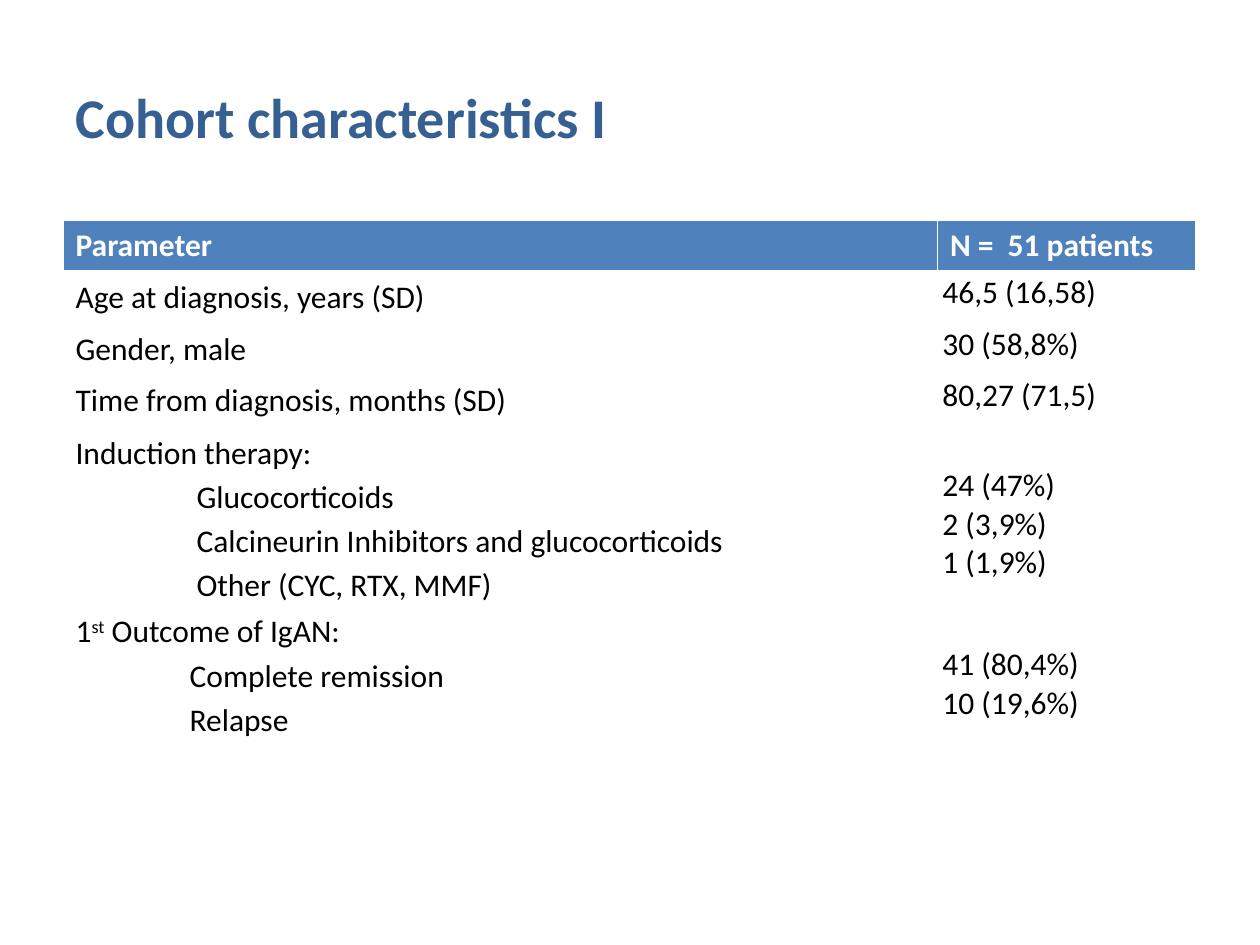
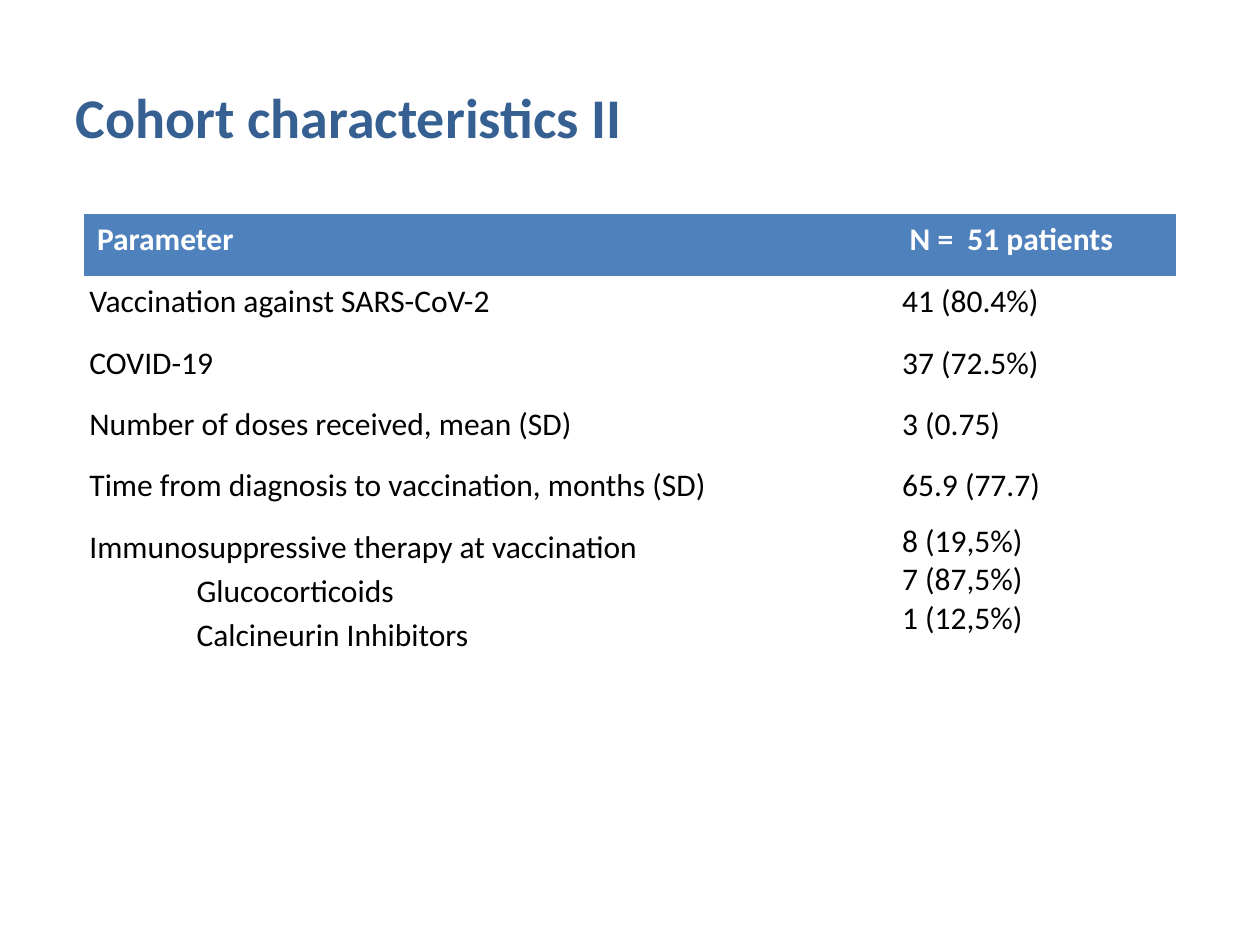
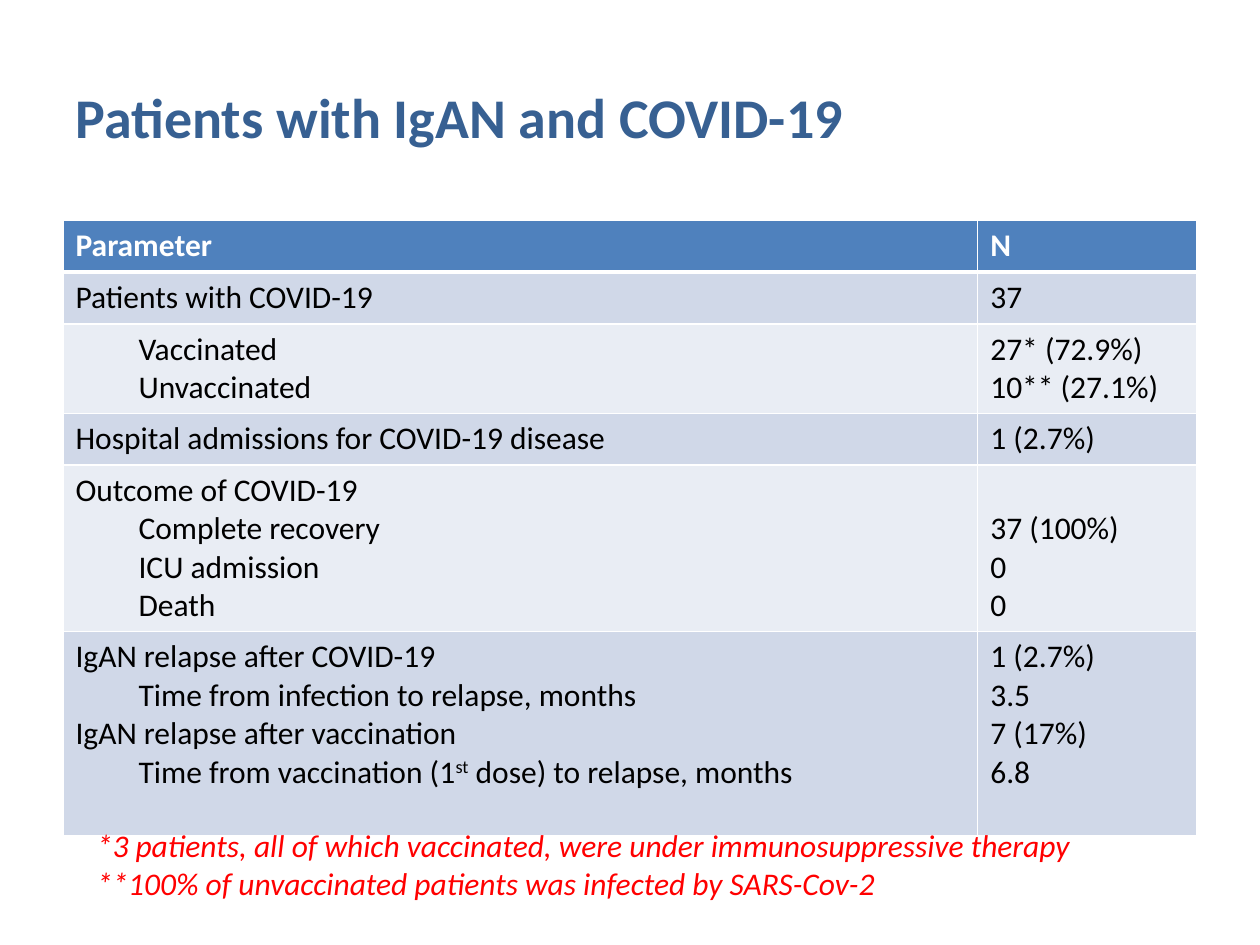
from lxml.etree import SubElement
from pptx import Presentation
from pptx.dml.color import RGBColor
from pptx.enum.text import MSO_ANCHOR, MSO_AUTO_SIZE, PP_ALIGN
from pptx.oxml.ns import qn
from pptx.util import Inches, Pt

COLORS = {
    "title": "376092",
    "header": "4F81BD",
    "white": "FFFFFF",
    "text": "000000",
    "band_dark": "D0D8E8",
    "band_light": "E9EDF4",
    "footnote": "FF0000",
}
FONT = "Calibri"
WIDTH, HEIGHT = Inches(10), Inches(7.5)
COLUMNS, ROWS = 20, 30
ONE_LINE = 1.64
TEXT_LINE = 1.22


def across(columns):
    return round(WIDTH * columns / COLUMNS)


def down(rows):
    return round(HEIGHT * rows / ROWS)


def cell_format(left, top, bottom, spacing=1.0):
    """Cell margins in grid units, with the line spacing of the text."""
    margins = {"margin_left": across(left), "margin_right": across(left),
               "margin_top": down(top), "margin_bottom": down(bottom)}
    return margins, spacing


ROOMY = cell_format(0.2, 0.2, 0.2)
TIGHT = cell_format(0.08, 0.04, 0)
TIGHT_SPACED = cell_format(0.08, 0.04, 0, 1.15)
GROUP = cell_format(0.2, 0.04, 0, 1.15)
TIGHT_BELOW_HEADING = cell_format(0.08, 0.04 + TEXT_LINE, 0)
ROOMY_BELOW_HEADING = cell_format(0.2, 0.2 + TEXT_LINE, 0.2)


def indented(depth, *lines):
    return [(depth, line) for line in lines]


class Deck:
    def __init__(self):
        self.presentation = Presentation()
        self.presentation.slide_width = WIDTH
        self.presentation.slide_height = HEIGHT
        self.slide = None

    def add_slide(self, heading):
        layout = self.presentation.slide_layouts[5]
        self.slide = self.presentation.slides.add_slide(layout)
        title = self.slide.shapes.title
        place = {"left": across(1), "top": down(1.2),
                 "width": across(18), "height": down(5)}
        for name, value in place.items():
            setattr(title, name, value)
        title.text_frame.vertical_anchor = MSO_ANCHOR.MIDDLE
        self.add_lines(title.text_frame, [heading], "title", size=32, bold=True)

    def add_lines(self, frame, lines, color, spacing=1.0, **style):
        """Fill a frame; a line may be (indent, text), and ^marks^ raise text."""
        font_values = {"name": FONT, "size": Pt(style.pop("size", 18)),
                       "bold": False, "italic": False, **style}
        for index, line in enumerate(lines):
            depth, text = line if isinstance(line, tuple) else (0, line)
            paragraph = frame.paragraphs[0] if index == 0 else frame.add_paragraph()
            paragraph.alignment = PP_ALIGN.LEFT
            paragraph.line_spacing = spacing
            if depth:
                paragraph.level = 1
                properties = paragraph._p.get_or_add_pPr()
                properties.set("marL", str(across(depth)))
                properties.set("indent", "0")
            for part_index, part in enumerate(text.split("^")):
                run = paragraph.add_run()
                run.text = part
                for name, value in font_values.items():
                    setattr(run.font, name, value)
                run.font.color.rgb = RGBColor.from_string(COLORS[color])
                if part_index % 2:
                    run._r.get_or_add_rPr().set("baseline", "30000")

    def fill_cell(self, cell, lines, fill, color, layout, rules, bold=False):
        margins, spacing = layout
        for name, value in margins.items():
            setattr(cell, name, value)
        self.add_lines(cell.text_frame, lines, color, spacing, bold=bold)
        properties = cell._tc.get_or_add_tcPr()
        for side, width in rules.items():
            border = SubElement(properties, qn(f"a:ln{side}"), w=str(Pt(width)))
            if width:
                paint = SubElement(border, qn("a:solidFill"))
                SubElement(paint, qn("a:srgbClr"), val=COLORS["white"])
            else:
                SubElement(border, qn("a:noFill"))
        cell.fill.solid()
        cell.fill.fore_color.rgb = RGBColor.from_string(COLORS[fill])

    def add_table(self, left, top, widths, headings, rows, bands=("white",),
                  header_height=ONE_LINE, rule=1):
        """Rows are (height, (label lines, format), (value lines, format))."""
        heights = [header_height] + [row[0] for row in rows]
        table = self.slide.shapes.add_table(
            len(heights), len(widths), across(left), down(top),
            across(sum(widths)), down(sum(heights))).table
        table.horz_banding = False
        for column, width in zip(table.columns, widths):
            column.width = across(width)
        for row, height in zip(table.rows, heights):
            row.height = down(height)
        rules = dict.fromkeys("LRTB", rule)
        for column, heading in enumerate(headings):
            self.fill_cell(table.cell(0, column), [heading], "header", "white",
                           ROOMY, {**rules, "B": 3 * rule}, bold=True)
        for index, (_, *contents) in enumerate(rows):
            body_rules = {**rules, "T": 3 * rule} if index == 0 else rules
            for column, (lines, layout) in enumerate(contents):
                self.fill_cell(table.cell(index + 1, column), lines,
                               bands[index % len(bands)], "text", layout, body_rules)

    def add_footnote(self, left, top, width, height, lines):
        box = self.slide.shapes.add_textbox(
            across(left), down(top), across(width), down(height))
        box.text_frame.word_wrap = True
        box.text_frame.auto_size = MSO_AUTO_SIZE.SHAPE_TO_FIT_TEXT
        self.add_lines(box.text_frame, lines, "footnote", italic=True)


def add_cohort_basics(deck):
    single = [("Age at diagnosis, years (SD)", "46,5 (16,58)"),
              ("Gender, male", "30 (58,8%)"),
              ("Time from diagnosis, months (SD)", "80,27 (71,5)")]
    therapy = ["Induction therapy:"] + indented(
        1.92, "Glucocorticoids", "Calcineurin Inhibitors and glucocorticoids",
        "Other (CYC, RTX, MMF)")
    outcome = ["1^st^ Outcome of IgAN:"] + indented(
        1.81, "Complete remission", "Relapse")
    rows = [(ONE_LINE, ([label], ROOMY), ([value], TIGHT)) for label, value in single]
    rows += [
        (5.68, (therapy, GROUP),
         (["24 (47%)", "2 (3,9%)", "1 (1,9%)"], TIGHT_BELOW_HEADING)),
        (4.24, (outcome, GROUP),
         (["41 (80,4%)", "10 (19,6%)"], TIGHT_BELOW_HEADING)),
    ]
    deck.add_slide("Cohort characteristics I")
    deck.add_table(1, 7, (13.88, 4.1), ("Parameter", "N =  51 patients"), rows)


def add_cohort_vaccination(deck):
    row_height = 1.95
    single = [("Vaccination against SARS-CoV-2", "41 (80.4%)"),
              ("COVID-19", "37 (72.5%)"),
              ("Number of doses received, mean (SD)", "3 (0.75)"),
              ("Time from diagnosis to vaccination, months (SD)", "65.9 (77.7)")]
    therapy = ["Immunosuppressive therapy at vaccination"] + indented(
        1.7, "Glucocorticoids", "Calcineurin Inhibitors")
    rows = [(row_height, ([label], TIGHT_SPACED), ([value], TIGHT_SPACED))
            for label, value in single]
    rows.append((7.56, (therapy, TIGHT_SPACED),
                 (["8 (19,5%)", "7 (87,5%)", "1 (12,5%)"], TIGHT)))
    deck.add_slide("Cohort characteristics II")
    deck.add_table(1.34, 6.8, (12.9, 4.42), ("Parameter", "N =  51 patients"), rows,
                   header_height=row_height, rule=0)


def add_covid_patients(deck):
    outcome = ["Outcome of COVID-19"] + indented(
        1, "Complete recovery", "ICU admission", "Death")
    relapse = ["IgAN relapse after COVID-19",
               (1, "Time from infection to relapse, months"),
               "IgAN relapse after vaccination",
               (1, "Time from vaccination (1^st^ dose) to relapse, months")]
    rows = [
        (ONE_LINE, (["Patients with COVID-19"], ROOMY), (["37"], ROOMY)),
        (2.84, (indented(1, "Vaccinated", "Unvaccinated"), ROOMY),
         (["27* (72.9%)", "10** (27.1%)"], ROOMY)),
        (ONE_LINE, (["Hospital admissions for COVID-19 disease"], ROOMY),
         (["1 (2.7%)"], ROOMY)),
        (5.28, (outcome, ROOMY), (["37 (100%)", "0", "0"], ROOMY_BELOW_HEADING)),
        (6.5, (relapse, ROOMY), (["1 (2.7%)", "3.5", "7 (17%)", "6.8"], ROOMY)),
    ]
    deck.add_slide("Patients with IgAN and COVID-19")
    deck.add_table(1, 7, (14.52, 3.48), ("Parameter", "N"), rows,
                   bands=("band_dark", "band_light"))
    deck.add_footnote(1.34, 26.04, 17.16, 2.84, [
        "*3 patients, all of which vaccinated, were under immunosuppressive therapy",
        "**100% of unvaccinated patients was infected by SARS-Cov-2"])


def main():
    deck = Deck()
    for add_content in (add_cohort_basics, add_cohort_vaccination, add_covid_patients):
        add_content(deck)
    deck.presentation.save("out.pptx")


if __name__ == "__main__":
    main()
